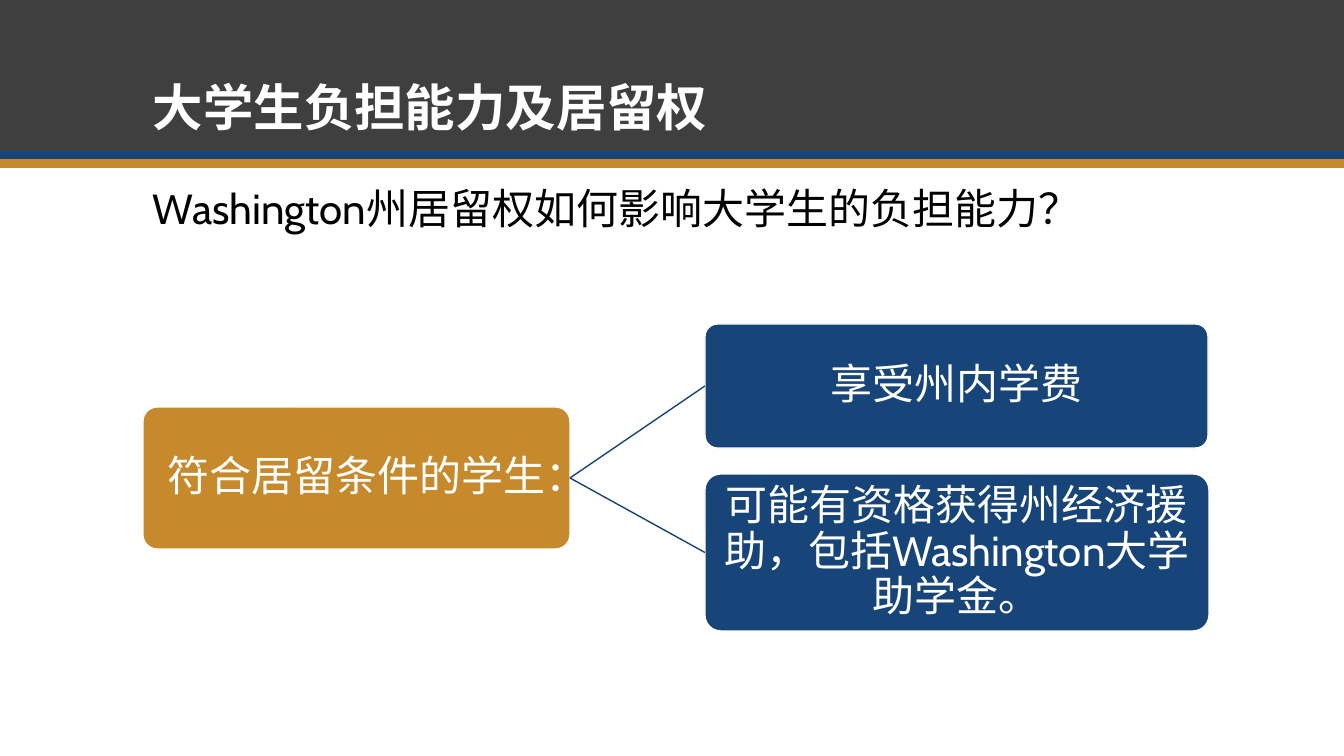
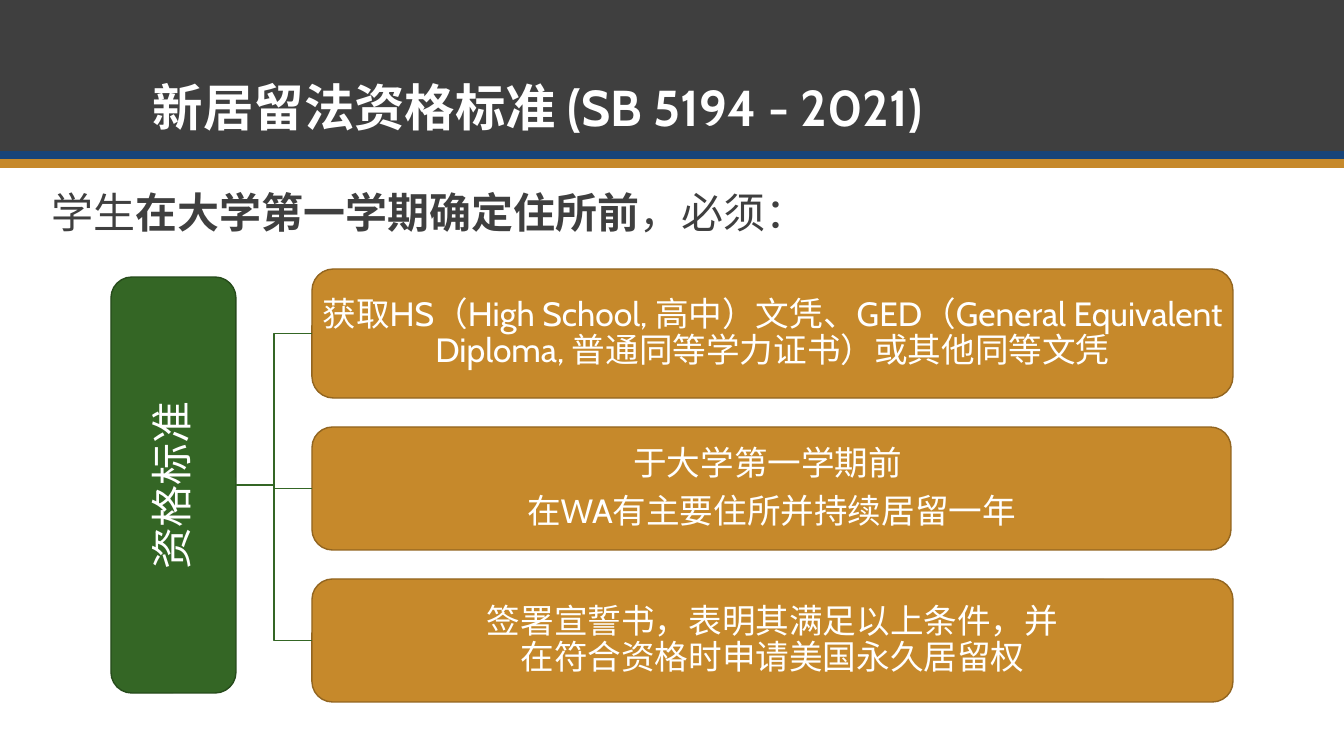
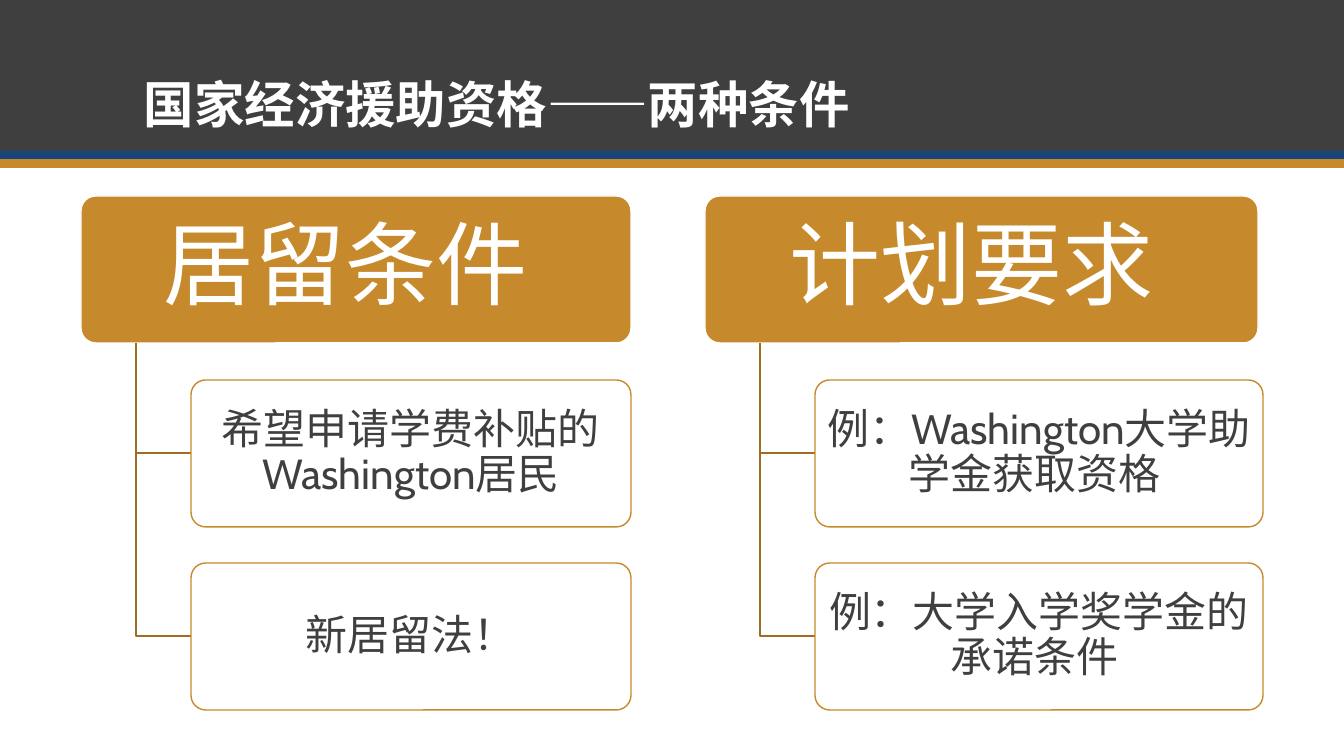
"""Three slides on college affordability and residency in Washington."""
from lxml import etree
from pptx import Presentation
from pptx import util as u
from pptx.dml.color import RGBColor
from pptx.enum import shapes, text
from pptx.oxml import ns

PX = 12192000 / 1344
W, H = 1344, 756
LATIN, CJK = "Cabin", "Noto Sans CJK SC"
C = {
    "white": "FFFFFF", "black": "000000", "gray": "3F3F3F",
    "blue": "174479", "gold": "C6892B", "green": "346625",
    "dark_green": "264B1B", "dark_gold": "926520", "brown": "9F6E22",
}
MIDDLE = text.MSO_ANCHOR.MIDDLE
BOTTOM = text.MSO_ANCHOR.BOTTOM
TOP = text.MSO_ANCHOR.TOP
CENTER = text.PP_ALIGN.CENTER
LEFT = text.PP_ALIGN.LEFT


def px(*values):
    return [u.Emu(round(v * PX)) for v in values]


def rgb(name):
    return RGBColor.from_string(C[name])


def style(p, size, color, bold=False, align=LEFT, spacing=0.9):
    p.alignment = align
    p.line_spacing = spacing
    f = p.font
    f.size = u.Pt(size)
    f.bold = bold
    f.color.rgb = rgb(color)
    f.name = LATIN
    etree.SubElement(f._rPr, ns.qn("a:ea")).set("typeface", CJK)


def setup_frame(tf, anchor, inset_x, inset_y):
    tf.word_wrap = True
    tf.vertical_anchor = anchor
    tf.margin_left = tf.margin_right = px(inset_x)[0]
    tf.margin_top = tf.margin_bottom = px(inset_y)[0]


def add_text(s, at, runs, size, color, bold=False, anchor=MIDDLE, spacing=0.9):
    tf = s.shapes.add_textbox(*px(*at)).text_frame
    setup_frame(tf, anchor, 10, 5)
    p = tf.paragraphs[0]
    for words, strong in runs:
        r = p.add_run()
        r.text = words
        if strong:
            r.font.bold = True
    style(p, size, color, bold, spacing=spacing)


def add_card(s, at, lines, size, fill, line, color="white", inset=(2, 2), adj=0.1):
    sp = s.shapes.add_shape(shapes.MSO_SHAPE.ROUNDED_RECTANGLE, *px(*at))
    sp.adjustments[0] = adj
    sp.shadow.inherit = False
    sp.fill.solid()
    sp.fill.fore_color.rgb = rgb(fill)
    sp.line.color.rgb = rgb(line)
    sp.line.width = u.Pt(1)
    tf = sp.text_frame
    setup_frame(tf, MIDDLE, *inset)
    for i, words in enumerate(lines):
        p = tf.add_paragraph() if i else tf.paragraphs[0]
        p.text = words
        if i:
            p.space_before = u.Pt(size * 0.35)
        style(p, size, color, align=CENTER)
    return sp


def add_link(s, kind, color, source, target):
    cn = s.shapes.add_connector(kind, 0, 0, 0, 0)
    cn.begin_connect(source, 3)
    cn.end_connect(target, 1)
    cn.line.color.rgb = rgb(color)
    cn.line.width = u.Pt(1)
    etree.SubElement(cn._element.spPr, ns.qn("a:effectLst"))


def add_branch(s, points, color):
    builder = s.shapes.build_freeform(*points[0], scale=PX)
    builder.add_line_segments(points[1:], close=False)
    sp = builder.convert_to_shape()
    sp.shadow.inherit = False
    sp.fill.background()
    sp.line.color.rgb = rgb(color)
    sp.line.width = u.Pt(1)


def add_slide(prs, title, left=143, top=28):
    s = prs.slides.add_slide(prs.slide_layouts[6])
    for y, h, color in ((0, 151, "gray"), (151, 9, "blue"), (159, 9, "gold")):
        sp = s.shapes.add_shape(shapes.MSO_SHAPE.RECTANGLE, *px(0, y, W, h))
        sp.shadow.inherit = False
        sp.fill.solid()
        sp.fill.fore_color.rgb = rgb(color)
        sp.line.fill.background()
    add_text(s, (left, top, W - left, 114), [(title, False)], 36, "white", True, BOTTOM)
    return s


def affordability(prs):
    s = add_slide(prs, "大学生负担能力及居留权")
    question = "Washington州居留权如何影响大学生的负担能力？"
    add_text(s, (143, 173, W - 143, 75), [(question, False)], 30, "black")
    students = add_card(s, (143, 407, 427, 142), ["符合居留条件的学生："], 30, "gold", "white")
    for at, words in (
        ((705, 324, 503, 124), "享受州内学费"),
        ((705, 474, 504, 157), "可能有资格获得州经济援助，包括Washington大学助学金。"),
    ):
        benefit = add_card(s, at, [words], 30, "blue", "white")
        add_link(s, shapes.MSO_CONNECTOR.STRAIGHT, "blue", students, benefit)


def criteria(prs):
    s = add_slide(prs, "新居留法资格标准 (SB 5194 - 2021)")
    add_text(s, (42, 182, W - 42, 61),
             [("学生", False), ("在大学第一学期确定住所前", True), ("，必须：", False)],
             30, "gray", anchor=TOP, spacing=1.0)
    heading = add_card(s, (111, 277, 125, 416), ["资格标准"], 30, "green", "dark_green",
                       adj=0.16667)
    heading.text_frame._txBody.bodyPr.set("vert", "vert270")
    y, gap = 269, 29
    for w, h, lines in (
        (921, 129, ["获取HS（High School, 高中）文凭、GED（General Equivalent Diploma, "
                    "普通同等学力证书）或其他同等文凭"]),
        (919, 123, ["于大学第一学期前 ", "在WA有主要住所并持续居留一年"]),
        (921, 123, ["签署宣誓书，表明其满足以上条件，并\v在符合资格时申请美国永久居留权"]),
    ):
        rule = add_card(s, (312, y, w, h), lines, 24, "gold", "dark_gold", adj=0.16667)
        add_link(s, shapes.MSO_CONNECTOR.ELBOW, "green", heading, rule)
        y += h + gap


def add_tree(s, x, head_w, item_w, head, items):
    top, h, first, step, indent = 196, 147, 380, 183, 110
    trunk = x + indent // 2
    add_card(s, (x, top, head_w, h), [head], 65, "gold", "white", inset=(14, 9))
    for i, words in enumerate(items):
        y = first + step * i
        middle = y + h // 2
        add_branch(s, [(trunk, top + h), (trunk, middle), (x + indent, middle)], "brown")
        add_card(s, (x + indent, y, item_w, h), [words], 30, "white", "gold",
                 "gray", inset=(6, 4))


def conditions(prs):
    s = add_slide(prs, "国家经济援助资格——两种条件", 134, 25)
    add_tree(s, 81, 550, 440, "居留条件 ",
             ["希望申请学费补贴的Washington居民", "新居留法！"])
    add_tree(s, 705, 553, 448, "计划要求 ",
             ["例：Washington大学助学金获取资格 ", "例：大学入学奖学金的承诺条件 "])


def main():
    prs = Presentation()
    prs.slide_width, prs.slide_height = px(W, H)
    affordability(prs)
    criteria(prs)
    conditions(prs)
    prs.save("out.pptx")


if __name__ == "__main__":
    main()
